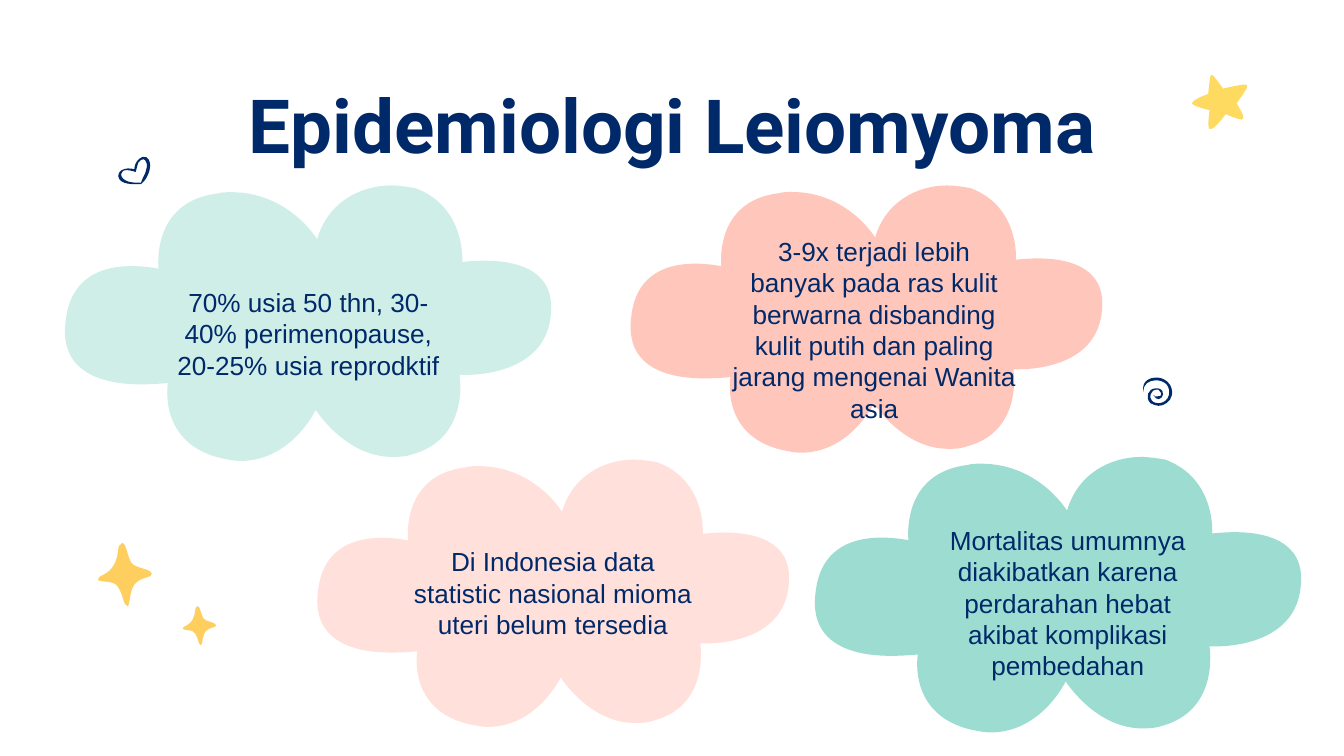
from dataclasses import dataclass

from lxml import etree
from pptx import Presentation
from pptx import util as u
from pptx.dml import color
from pptx.enum import text
from pptx.oxml import ns


@dataclass(frozen=True)
class Theme:
    navy: str = "002969"
    coral: str = "FFC6BB"
    mint: str = "9DDDD1"
    gold: str = "FECE5F"
    yellow: str = "FFDA60"
    background: str = "FFFFFF"
    title_font: str = "Roboto"
    body_font: str = "Arial"
    title_size: int = 40
    body_size: int = 14


CLOUD = [[
    (248, 0), (226, 0, 201, 12, 193, 40), (193, 40, 172, 5, 129, 5),
    (126, 5, 122, 5, 119, 6), (69, 12, 75, 62, 75, 62),
    (75, 62, 66, 60, 55, 60), (36, 60, 10, 66, 6, 100),
    (0, 142, 38, 148, 62, 148), (73, 148, 82, 147, 82, 147),
    (82, 147, 74, 192, 122, 203), (127, 204, 132, 205, 136, 205),
    (174, 205, 192, 167, 192, 167), (192, 167, 214, 202, 249, 202),
    (254, 202, 258, 202, 264, 200), (307, 188, 299, 141, 299, 141),
    (299, 141, 301, 141, 303, 141), (316, 141, 364, 138, 367, 95),
    (370, 61, 338, 56, 318, 56), (308, 56, 301, 57, 301, 57),
    (301, 57, 304, 16, 266, 2), (260, 1, 254, 0, 248, 0),
]]
SPARKLE = [[
    (18, 0), (17, 0, 17, 1, 17, 1), (14, 1, 16, 9, 12, 16),
    (8, 24, 0, 24, 0, 27), (0, 30, 12, 27, 15, 33),
    (19, 39, 19, 47, 22, 47), (24, 47, 23, 33, 29, 29),
    (34, 25, 40, 26, 40, 23), (39, 19, 28, 19, 25, 15),
    (22, 11, 21, 0, 18, 0),
]]
STAR = [[
    (15, 0), (14, 0, 14, 0, 14, 0), (13, 1, 12, 14, 12, 14),
    (12, 14, 0, 18, 0, 21), (0, 23, 13, 26, 13, 26),
    (13, 26, 11, 39, 13, 40), (13, 40, 13, 40, 14, 40),
    (17, 40, 25, 29, 25, 29), (25, 29, 34, 33, 37, 33),
    (38, 33, 38, 32, 38, 32), (39, 30, 33, 21, 33, 21),
    (33, 21, 42, 9, 41, 8), (41, 7, 41, 7, 40, 7),
    (35, 7, 23, 10, 23, 10), (23, 10, 16, 0, 15, 0),
]]
SPIRAL = [[
    (11, 0), (5, 0, 0, 4, 2, 11), (1, 5, 6, 2, 11, 2),
    (14, 2, 17, 3, 19, 5), (23, 10, 21, 18, 14, 19),
    (14, 19, 13, 19, 13, 19), (10, 19, 8, 18, 7, 15),
    (7, 13, 7, 12, 8, 11), (8, 10, 10, 9, 11, 9),
    (12, 9, 12, 9, 13, 9), (16, 12, 16, 14, 12, 14),
    (12, 14, 11, 14, 10, 14), (10, 13, 10, 13, 10, 13),
    (9, 13, 9, 14, 10, 14), (10, 15, 12, 16, 13, 16),
    (16, 16, 19, 10, 13, 8), (12, 8, 11, 8, 11, 8),
    (5, 8, 3, 15, 7, 19), (9, 20, 11, 21, 13, 21),
    (17, 21, 22, 18, 23, 13), (24, 7, 20, 1, 13, 0),
    (12, 0, 12, 0, 11, 0),
]]
HEART = [
    [(4, 10), (6, 9, 10, 10, 13, 11), (14, 8, 14, 6, 15, 4),
     (16, 3, 16, 3, 17, 2), (18, 1, 20, 1, 21, 4),
     (22, 6, 21, 9, 20, 12), (19, 14, 18, 16, 17, 19),
     (13, 19, 8, 19, 5, 17), (3, 16, 1, 13, 3, 11),
     (3, 11, 3, 11, 4, 10)],
    [(2, 10), (1, 11, 0, 12, 0, 14), (1, 21, 12, 20, 17, 20),
     (17, 20, 18, 20, 18, 19), (22, 16, 27, 4, 21, 0),
     (19, -1, 17, 0, 16, 1), (13, 3, 12, 7, 12, 9),
     (9, 8, 5, 8, 2, 10)],
]


class SlideBuilder:
    """Draw styled elements on the current slide."""

    def __init__(self, presentation, theme):
        self.theme = theme
        self.slide = presentation.slides.add_slide(presentation.slide_layouts[4])
        fill = self.slide.background.fill
        fill.solid()
        fill.fore_color.rgb = color.RGBColor.from_string(theme.background)

    def outline(self, contours, left, top, fill, scale=1.0, opacity=100):
        builder = self.slide.shapes.build_freeform(
            *contours[0][0], scale=u.Inches(0.01) * scale)
        for index, (start, *curves) in enumerate(contours):
            if index:
                builder.move_to(*start)
            points = [curve[i:i + 2] for curve in curves for i in (0, 2, 4)]
            builder.add_line_segments(points, close=True)
        shape = builder.convert_to_shape(u.Inches(left), u.Inches(top))
        self.curve(shape)
        shape.shadow.inherit = False
        shape.line.fill.background()
        shape.fill.solid()
        shape.fill.fore_color.rgb = color.RGBColor.from_string(fill)
        if opacity < 100:
            tint = next(shape._element.spPr.iter(ns.qn("a:srgbClr")))
            etree.SubElement(tint, ns.qn("a:alpha"), val=str(opacity * 1000))

    def curve(self, shape):
        lines = list(shape._element.iter(ns.qn("a:lnTo")))
        for first, *others in zip(lines[::3], lines[1::3], lines[2::3]):
            bezier = etree.Element(ns.qn("a:cubicBezTo"))
            first.addprevious(bezier)
            for line in (first, *others):
                bezier.append(line[0])
                line.getparent().remove(line)

    def placeholder(self, shape, words, box, font, size, bold=False, after=0):
        shape.left, shape.top, shape.width, shape.height = map(u.Inches, box)
        frame = shape.text_frame
        frame.text = words
        frame.word_wrap = True
        frame.auto_size = text.MSO_AUTO_SIZE.NONE
        frame.vertical_anchor = text.MSO_ANCHOR.TOP
        frame.margin_left = frame.margin_right = u.Inches(0.1)
        frame.margin_top = frame.margin_bottom = u.Inches(0.1)
        paragraph = frame.paragraphs[0]
        paragraph.alignment = text.PP_ALIGN.CENTER
        paragraph.line_spacing = 1.0
        paragraph.space_before = u.Pt(0)
        paragraph.space_after = u.Pt(after)
        properties = paragraph._p.get_or_add_pPr()
        properties.set("marL", "0")
        properties.set("indent", "0")
        etree.SubElement(properties, ns.qn("a:buNone"))
        style = paragraph.runs[0].font
        style.name, style.size, style.bold = font, u.Pt(size), bold
        style.color.rgb = color.RGBColor.from_string(self.theme.navy)

    def title(self, words):
        self.placeholder(self.slide.shapes.title, words, (0.78, 0.49, 8.44, 0.63),
                         self.theme.title_font, self.theme.title_size, bold=True)

    def body(self, index, words, left, top):
        self.placeholder(self.slide.placeholders[index], words, (left, top, 2.31, 0.78),
                         self.theme.body_font, self.theme.body_size, after=12)


def main():
    presentation = Presentation()
    presentation.slide_width = u.Inches(10)
    presentation.slide_height = presentation.slide_width * 9 // 16
    theme = Theme()
    builder = SlideBuilder(presentation, theme)

    builder.outline(SPARKLE, 0.73, 4.04, theme.gold)
    builder.outline(SPARKLE, 1.36, 4.51, theme.gold, scale=0.62)
    builder.outline(SPIRAL, 8.49, 2.81, theme.navy)
    builder.outline(HEART, 0.88, 1.17, theme.navy)
    builder.outline(STAR, 8.87, 0.56, theme.yellow)

    clouds = [
        (4.64, 1.38, theme.coral, 0.97, 100),
        (2.31, 3.42, theme.coral, 0.97, 53),
        (6.01, 3.4, theme.mint, 1, 100),
        (0.43, 1.38, theme.mint, 1, 48),
    ]
    for cloud in clouds:
        builder.outline(CLOUD, *cloud)

    facts = [
        ("70% usia 50 thn, 30-40% perimenopause, 20-25% usia reprodktif", 1.14, 2.03),
        ("3-9x terjadi lebih banyak pada ras kulit berwarna disbanding kulit putih "
         "dan paling jarang mengenai Wanita asia", 5.35, 1.65),
        ("Mortalitas umumnya diakibatkan karena perdarahan hebat akibat komplikasi "
         "pembedahan", 6.79, 3.8),
        ("Di Indonesia data statistic nasional mioma uteri belum tersedia", 2.96, 3.96),
    ]
    for index, fact in enumerate(facts, start=1):
        builder.body(index, *fact)
    builder.title("Epidemiologi Leiomyoma")

    for shape in builder.slide.placeholders:
        builder.slide.shapes._spTree.append(shape._element)
    presentation.save("out.pptx")


if __name__ == "__main__":
    main()
